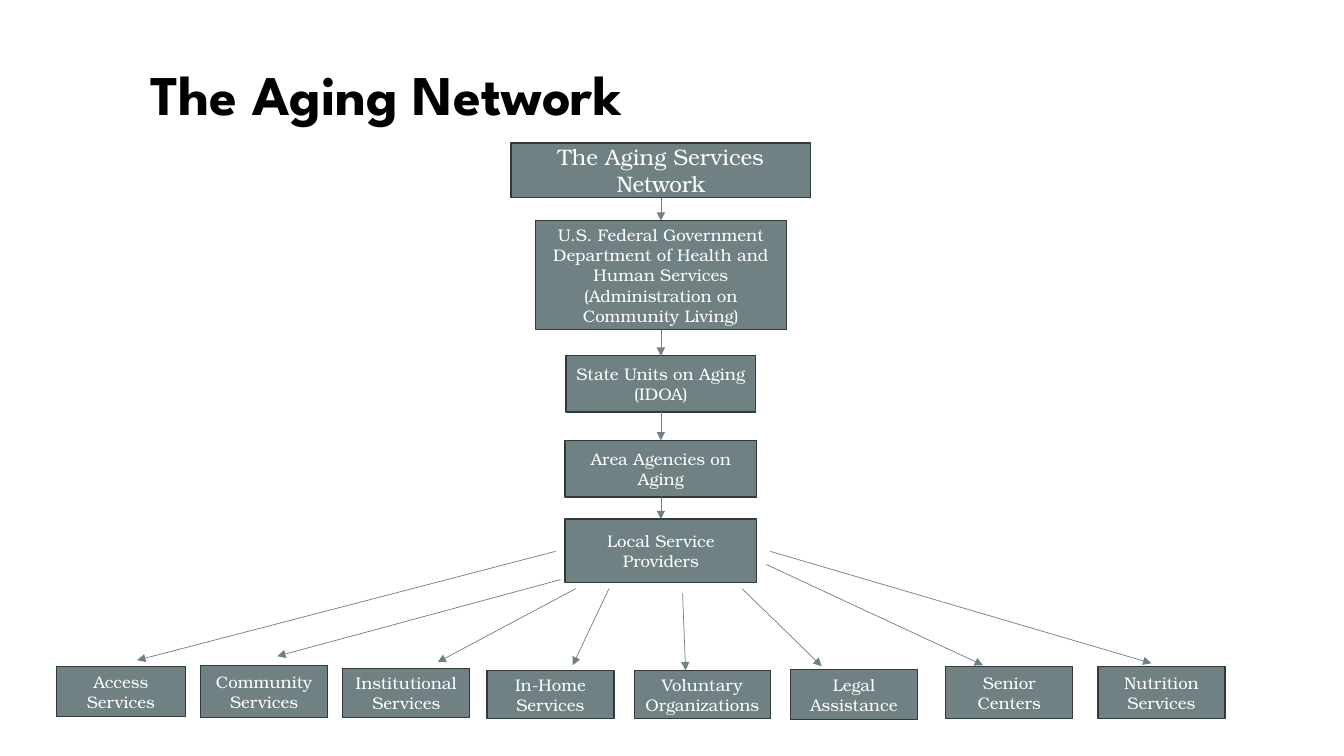
"""Build the Aging Network slide: a chain of agencies fanning out to local services."""
from lxml import etree
from pptx import Presentation
from pptx.dml.color import RGBColor
from pptx.enum.shapes import MSO_CONNECTOR, MSO_SHAPE
from pptx.enum.text import MSO_ANCHOR, PP_ALIGN
from pptx.oxml.ns import qn
from pptx.util import Inches, Pt

RECTANGLE = MSO_SHAPE.RECTANGLE
STRAIGHT = MSO_CONNECTOR.STRAIGHT
MIDDLE = MSO_ANCHOR.MIDDLE
CENTER = PP_ALIGN.CENTER
BOTTOM_SIDE, TOP_SIDE = 2, 0

BLACK = RGBColor(0x00, 0x00, 0x00)
WHITE = RGBColor(0xFF, 0xFF, 0xFF)
SLATE = RGBColor(0x6F, 0x81, 0x83)
DARK_SLATE = RGBColor(0x31, 0x39, 0x39)
TITLE_FONT = "League Spartan"
BODY_FONT = "TeX Gyre Bonum"

GRID_COLUMNS, GRID_ROWS = 1333, 750
CELL = Inches(0.01)
CHAIN_CENTER = 655.5
INSET = 8

TITLE = ("The Aging Network", (139, 62, 1100, 176))

# text, top row, width, height, font size
CHAIN = [
    ("The Aging Services Network", 142, 297, 54, 16),
    ("U.S. Federal Government Department of Health and Human Services "
     "(Administration on Community Living)", 219, 249, 108, 12),
    ("State Units on Aging (IDOA)", 353, 188, 56, 12),
    ("Area Agencies on Aging", 437, 190, 56, 12),
    ("Local Service Providers", 515, 190, 63, 12),
]

# text, box (left, top, width, height), arrow start, arrow tip
SERVICES = [
    ("Access Services", (56, 661, 128, 50), (551, 547), (136, 655)),
    ("Community Services", (199, 660, 126, 52), (556, 575), (275, 651)),
    ("Institutional Services", (340, 663, 126, 49), (571, 584), (434, 657)),
    ("In-Home Services", (483, 665, 126, 48), (604, 584), (568, 660)),
    ("Voluntary Organizations", (629, 665, 135, 48), (677, 589), (680, 665)),
    ("Legal Assistance", (784, 664, 126, 50), (736, 584), (815, 661)),
    ("Senior Centers", (938, 661, 126, 52), (760, 560), (975, 660)),
    ("Nutrition Services", (1089, 661, 126, 52), (764, 547), (1142, 658)),
]


def cells(*counts):
    return [int(count * CELL) for count in counts]


def style_text(paragraph, font_name, size, color, bold=False):
    for run in paragraph.runs:
        run.font.name = font_name
        run.font.size = Pt(size)
        run.font.color.rgb = color
        run.font.bold = bold


def add_title(slide, text, bounds):
    text_frame = slide.shapes.add_textbox(*cells(*bounds)).text_frame
    text_frame.word_wrap = True
    text_frame.text = text
    paragraph = text_frame.paragraphs[0]
    paragraph.line_spacing = 0.9
    style_text(paragraph, TITLE_FONT, 40, BLACK, bold=True)


def add_box(slide, text, bounds, size=12):
    box = slide.shapes.add_shape(RECTANGLE, *cells(*bounds))
    box.shadow.inherit = False
    box.fill.solid()
    box.fill.fore_color.rgb = SLATE
    box.line.color.rgb = DARK_SLATE
    box.line.width = Pt(1)
    text_frame = box.text_frame
    text_frame.word_wrap = True
    text_frame.vertical_anchor = MIDDLE
    text_frame.margin_left = text_frame.margin_right = cells(INSET)[0]
    text_frame.text = text
    paragraph = text_frame.paragraphs[0]
    paragraph.alignment = CENTER
    style_text(paragraph, BODY_FONT, size, WHITE)
    return box


def add_arrow(slide, start=(0, 0), tip=(0, 0)):
    arrow = slide.shapes.add_connector(STRAIGHT, *cells(*start, *tip))
    arrow.line.color.rgb = SLATE
    arrow.line.width = Pt(0.5)
    etree.SubElement(arrow.line._get_or_add_ln(), qn("a:tailEnd"), type="triangle")
    etree.SubElement(arrow._element.spPr, qn("a:effectLst"))
    return arrow


def main():
    presentation = Presentation()
    presentation.slide_width, presentation.slide_height = cells(GRID_COLUMNS, GRID_ROWS)
    slide = presentation.slides.add_slide(presentation.slide_layouts[6])

    add_title(slide, *TITLE)
    chain_boxes = [
        add_box(slide, text, (CHAIN_CENTER - width / 2, top, width, height), size)
        for text, top, width, height, size in CHAIN
    ]
    for upper, lower in zip(chain_boxes, chain_boxes[1:]):
        arrow = add_arrow(slide)
        arrow.begin_connect(upper, BOTTOM_SIDE)
        arrow.end_connect(lower, TOP_SIDE)

    for text, bounds, start, tip in SERVICES:
        add_box(slide, text, bounds)
        add_arrow(slide, start, tip)

    presentation.save("out.pptx")


if __name__ == "__main__":
    main()
